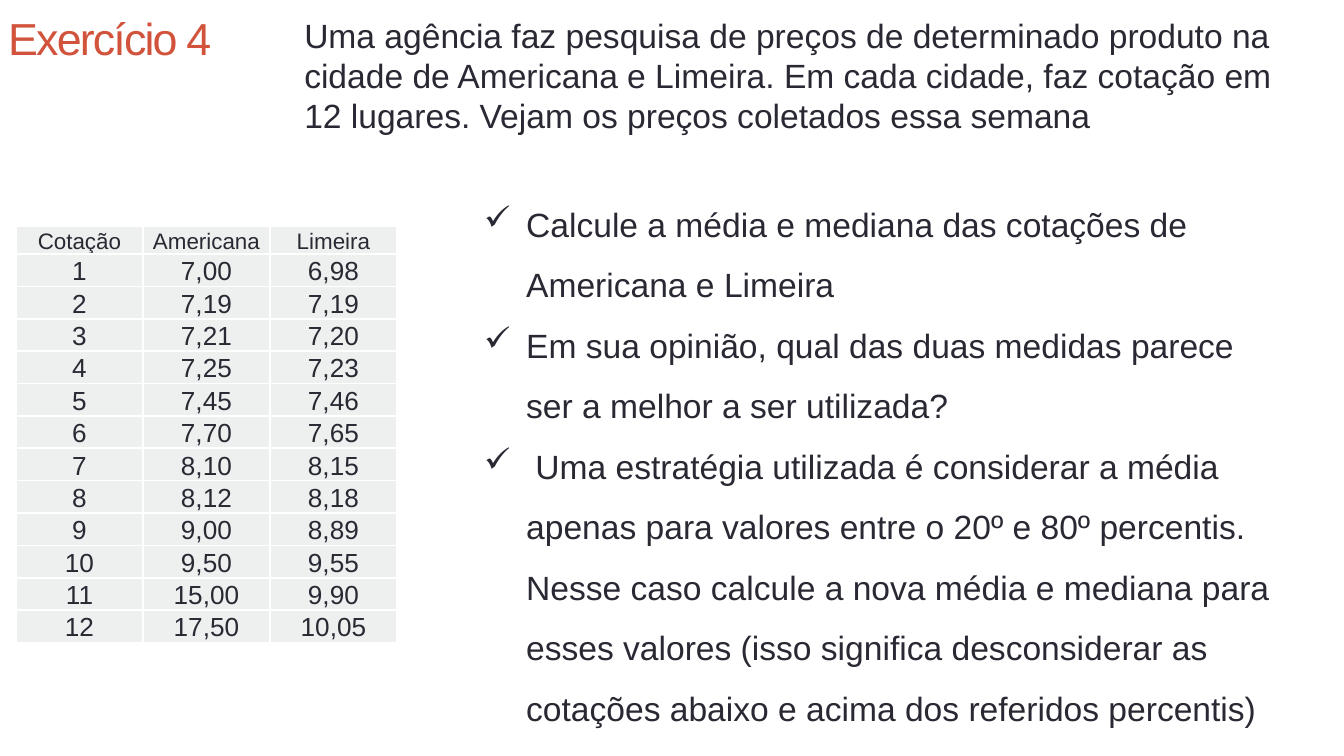
from lxml import etree
from pptx import Presentation, util as u
from pptx.dml.color import RGBColor
from pptx.enum import text
from pptx.oxml import ns

PX = 9144000 / 1344
FONT = "Arial"
COLORS = {"title": "D2533C", "body": "292934", "cell": "EEF0EF", "border": "FFFFFF"}

INTRO = (
    "Uma agência faz pesquisa de preços de determinado produto na cidade de "
    "Americana e Limeira. Em cada cidade, faz cotação em 12 lugares. "
    "Vejam os preços coletados essa semana"
)
QUESTIONS = [
    "Calcule a média e mediana das cotações de Americana e Limeira",
    "Em sua opinião, qual das duas medidas parece ser a melhor a ser utilizada?",
    " Uma estratégia utilizada é considerar a média apenas para valores entre o "
    "20º e 80º percentis. Nesse caso calcule a nova média e mediana para esses "
    "valores (isso significa desconsiderar as cotações abaixo e acima dos "
    "referidos percentis)",
]
HEADER = ["Cotação", "Americana", "Limeira"]
AMERICANA = "7,00 7,19 7,21 7,25 7,45 7,70 8,10 8,12 9,00 9,50 15,00 17,50".split()
LIMEIRA = "6,98 7,19 7,20 7,23 7,46 7,65 8,15 8,18 8,89 9,55 9,90 10,05".split()


def px(length):
    return u.Emu(round(length * PX))


def style(paragraph, size, color="body"):
    paragraph.font.name = FONT
    paragraph.font.size = u.Pt(size)
    paragraph.font.color.rgb = RGBColor.from_string(COLORS[color])


def add_text(slide, box, lines, size, color="body"):
    frame = slide.shapes.add_textbox(*map(px, box)).text_frame
    frame.word_wrap = True
    frame.text = "\n".join(lines)
    for paragraph in frame.paragraphs:
        style(paragraph, size, color)
    return frame


def add_title(slide, box):
    title = add_text(slide, box, ["Exercício 4"], 24, "title")
    title.vertical_anchor = text.MSO_ANCHOR.MIDDLE
    title.paragraphs[0].runs[0].font._element.set("spc", "-100")


def add_questions(slide, box):
    questions = add_text(slide, box, QUESTIONS, 18)
    indent = px(42)
    for question in questions.paragraphs:
        question.line_spacing = 1.5
        properties = question._p.get_or_add_pPr()
        properties.set("marL", str(indent))
        properties.set("indent", str(-indent))
        bullet = etree.Element(ns.qn("a:buChar"), char="✓")
        properties.insert_element_before(bullet, "a:tabLst", "a:defRPr", "a:extLst")


def add_borders(cell):
    properties = cell._tc.get_or_add_tcPr()
    for position, side in enumerate(("lnL", "lnR", "lnT", "lnB")):
        line = etree.Element(ns.qn(f"a:{side}"), w=str(u.Pt(1)))
        fill = etree.SubElement(line, ns.qn("a:solidFill"))
        etree.SubElement(fill, ns.qn("a:srgbClr"), val=COLORS["border"])
        properties.insert(position, line)


def add_prices(slide, box):
    quotes = zip(map(str, range(1, 13)), AMERICANA, LIMEIRA)
    rows = [HEADER, *quotes]
    prices = slide.shapes.add_table(len(rows), len(HEADER), *map(px, box)).table
    for row in prices.rows:
        row.height = px(28)
    for r, values in enumerate(rows):
        for c, value in enumerate(values):
            cell = prices.cell(r, c)
            cell.text = value
            cell.vertical_anchor = text.MSO_ANCHOR.BOTTOM
            cell.margin_left = cell.margin_right = cell.margin_top = px(1)
            cell.margin_bottom = 0
            cell.fill.solid()
            cell.fill.fore_color.rgb = RGBColor.from_string(COLORS["cell"])
            paragraph = cell.text_frame.paragraphs[0]
            paragraph.alignment = text.PP_ALIGN.CENTER
            style(paragraph, 14 if r else 12)
            paragraph.font.bold = False
            add_borders(cell)


def main():
    deck = Presentation()
    deck.slide_width, deck.slide_height = px(1344), px(756)
    slide = deck.slides.add_slide(deck.slide_layouts[6])
    add_title(slide, (-5, 16, 1210, 44))
    add_text(slide, (291, 8, 998, 136), [INTRO], 18)
    add_questions(slide, (471, 177, 817, 563))
    add_prices(slide, (16, 226, 381, 422))
    deck.save("out.pptx")


if __name__ == "__main__":
    main()
